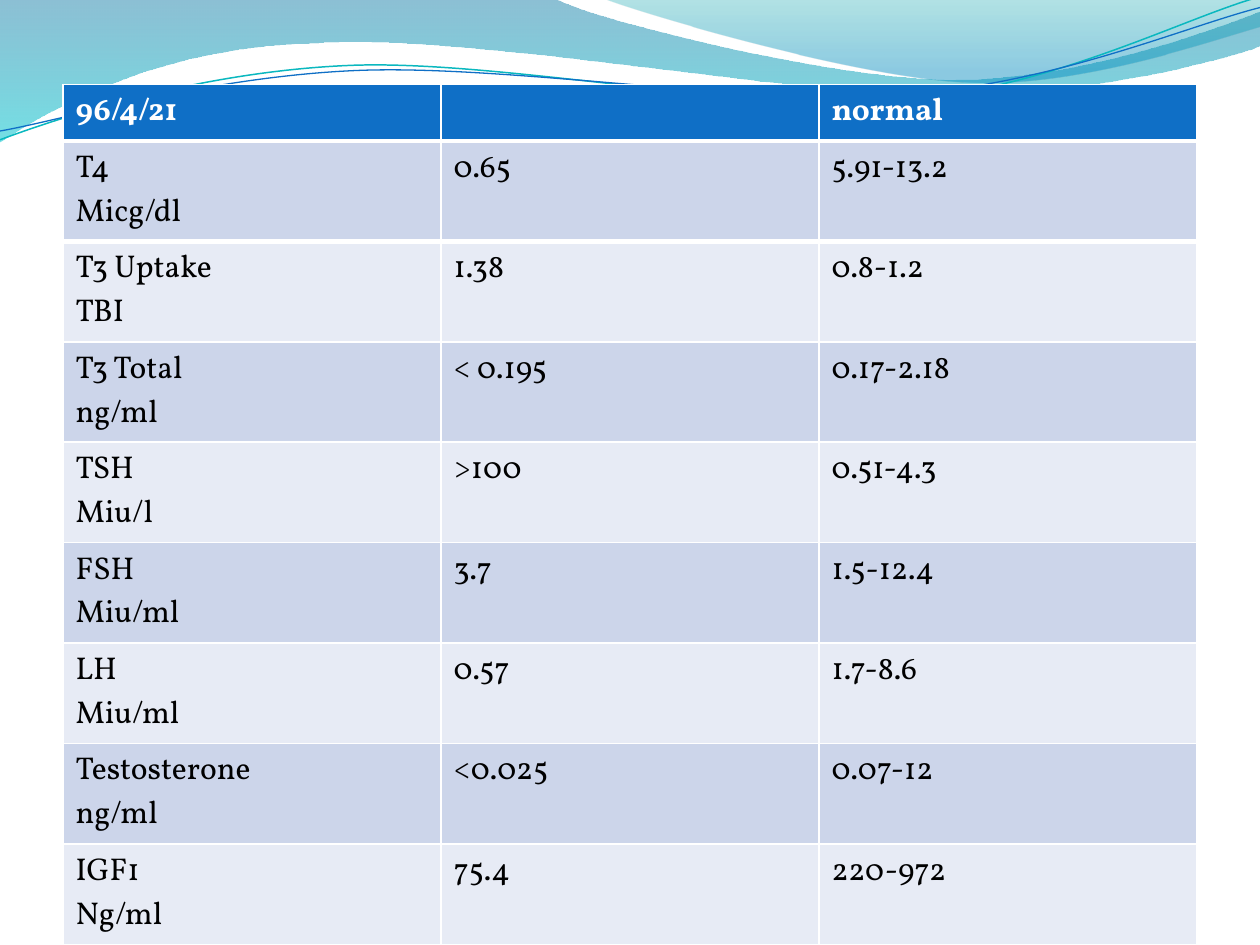
from dataclasses import dataclass

from lxml.etree import Element, SubElement
from pptx import Presentation
from pptx.dml.color import RGBColor
from pptx.oxml.ns import qn
from pptx.util import Cm, Pt


@dataclass(frozen=True)
class Theme:
    font: str = "Vollkorn"
    size: int = 18
    rule: int = 3
    head: str = "0F6FC6"
    bands: tuple = ("CCD5EA", "E7EBF5")
    light: str = "FFFFFF"
    dark: str = "000000"
    teal: str = "0AB8BF"
    # Gradient stops: position, colour, opacity in percent
    sea: tuple = ((0, "0074A1", 45), (1, "00C6CF", 55))
    sky: tuple = ((0, "00A1A9", 30), (0.8, "008BBF", 45))


INCH = 2.54  # cm per drawing unit of the waves

# Each wave: start point, then line ends (2 numbers) or Bezier curves (6)
BROAD = [
    (0, 0), (4.4, -0.01),
    (4.76, 0.17, 6.64, 0.63, 7.58, 0.63), (8.53, 0.63, 9.58, 0.26, 10, 0.09),
    (10.01, 0.36),
    (9.83, 0.44, 8.7, 0.76, 7.46, 0.75), (6.22, 0.75, 3.82, 0.28, 2.57, 0.34),
    (1.29, 0.36, 0.46, 0.83, -0.01, 1.13), (0, 0),
]
RIGHT = [
    (4.79, -0.01),
    (5.09, 0.11, 6.82, 0.62, 7.69, 0.65), (8.56, 0.69, 9.61, 0.32, 10, 0.21),
    (10, 0), (4.79, -0.01),
]
UPPER = [
    (0, 1.11),
    (0.48, 0.93, 1.58, 0.57, 2.77, 0.52), (3.95, 0.47, 5.93, 0.89, 7.13, 0.8),
    (8.33, 0.71, 9.38, 0.15, 9.98, -0.02),
]
LOWER = [
    (0, 1.04),
    (0.47, 0.96, 1.64, 0.61, 2.83, 0.56), (4.03, 0.51, 5.97, 0.84, 7.17, 0.75),
    (8.36, 0.67, 9.41, 0.21, 10, 0.06),
]

ROWS = [
    ("96/4/21", "", "normal"),
    ("T4\nMicg/dl", "0.65", "5.91-13.2"),
    ("T3 Uptake\nTBI", "1.38", "0.8-1.2"),
    ("T3 Total\nng/ml", "< 0.195", "0.17-2.18"),
    ("TSH\nMiu/l", ">100", "0.51-4.3"),
    ("FSH\nMiu/ml", "3.7", "1.5-12.4"),
    ("LH\nMiu/ml", "0.57", "1.7-8.6"),
    ("Testosterone\nng/ml", "<0.025", "0.07-12"),
    ("IGF1\nNg/ml", "75.4", "220-972"),
]
HEIGHTS = [1.02] + [1.75] * 6 + [1.96] * 2


class Deck:
    def __init__(self, theme):
        self.theme = theme
        self.file = Presentation()
        self.file.slide_width, self.file.slide_height = Cm(25.4), Cm(19.05)
        self.slide = self.file.slides.add_slide(self.file.slide_layouts[6])

    def shape(self, wave, close):
        first, *rest = [
            (Cm(part[i] * INCH), Cm(part[i + 1] * INCH))
            for part in wave for i in range(0, len(part), 2)
        ]
        pen = self.slide.shapes.build_freeform(*first)
        pen.add_line_segments(rest, close=close)
        shape = pen.convert_to_shape()
        shape.shadow.inherit = False
        # Join each run of three points into one Bezier curve
        lines = iter(list(shape.element.spPr.iter(qn("a:lnTo"))))
        for part in wave[1:]:
            line = next(lines)
            if len(part) == 6:
                curve = Element(qn("a:cubicBezTo"))
                line.addprevious(curve)
                for piece in (line, next(lines), next(lines)):
                    curve.append(piece[0])
                    piece.getparent().remove(piece)
        return shape

    def band(self, wave, stops):
        shape = self.shape(wave, True)
        shape.line.fill.background()
        shape.fill.gradient()
        shape.fill.gradient_angle = 270
        for stop, (place, color, _) in zip(shape.fill.gradient_stops, stops):
            stop.position = place
            stop.color.rgb = RGBColor.from_string(color)
        # Opacity of each stop
        tints = list(shape.element.spPr.iter(qn("a:srgbClr")))
        for tint, (_, _, alpha) in zip(tints, stops):
            SubElement(tint, qn("a:alpha"), val=str(alpha * 1000))

    def curve(self, wave, color, width):
        shape = self.shape(wave, False)
        shape.fill.background()
        shape.line.color.rgb = RGBColor.from_string(color)
        shape.line.width = Pt(width)

    def edge(self, cell, side):
        line = Element(qn(side), w=str(Pt(self.theme.rule)))
        fill = SubElement(line, qn("a:solidFill"))
        SubElement(fill, qn("a:srgbClr"), val=self.theme.light)
        cell._tc.get_or_add_tcPr().insert(0, line)

    def cell(self, cell, text, fill, color, bold):
        cell.fill.solid()
        cell.fill.fore_color.rgb = RGBColor.from_string(fill)
        if not text:
            return
        cell.text = text
        style = {"name": self.theme.font, "size": Pt(self.theme.size), "bold": bold}
        for para in cell.text_frame.paragraphs:
            for run in para.runs:
                for key, value in style.items():
                    setattr(run.font, key, value)
                run.font.color.rgb = RGBColor.from_string(color)

    def table(self, rows, heights, left, top, width):
        look = self.theme
        frame = self.slide.shapes.add_table(
            len(rows), len(rows[0]), Cm(left), Cm(top), Cm(width), Cm(sum(heights))
        )
        grid = frame.table
        for i, (texts, height) in enumerate(zip(rows, heights)):
            grid.rows[i].height = Cm(height)
            head = i == 0
            fill = look.head if head else look.bands[(i - 1) % 2]
            color = look.light if head else look.dark
            for j, text in enumerate(texts):
                self.cell(grid.cell(i, j), text, fill, color, head)
        # Thick rule under the header
        for j in range(len(rows[0])):
            self.edge(grid.cell(0, j), "a:lnB")
            self.edge(grid.cell(1, j), "a:lnT")


def main():
    theme = Theme()
    deck = Deck(theme)
    # Waves along the top edge
    deck.band(BROAD, theme.sea)
    deck.band(RIGHT, theme.sky)
    deck.curve(UPPER, theme.teal, 0.85)
    deck.curve(LOWER, theme.head, 0.75)
    # Lab results
    deck.table(ROWS, HEIGHTS, left=1.27, top=1.7, width=22.86)
    deck.file.save("out.pptx")


if __name__ == "__main__":
    main()
